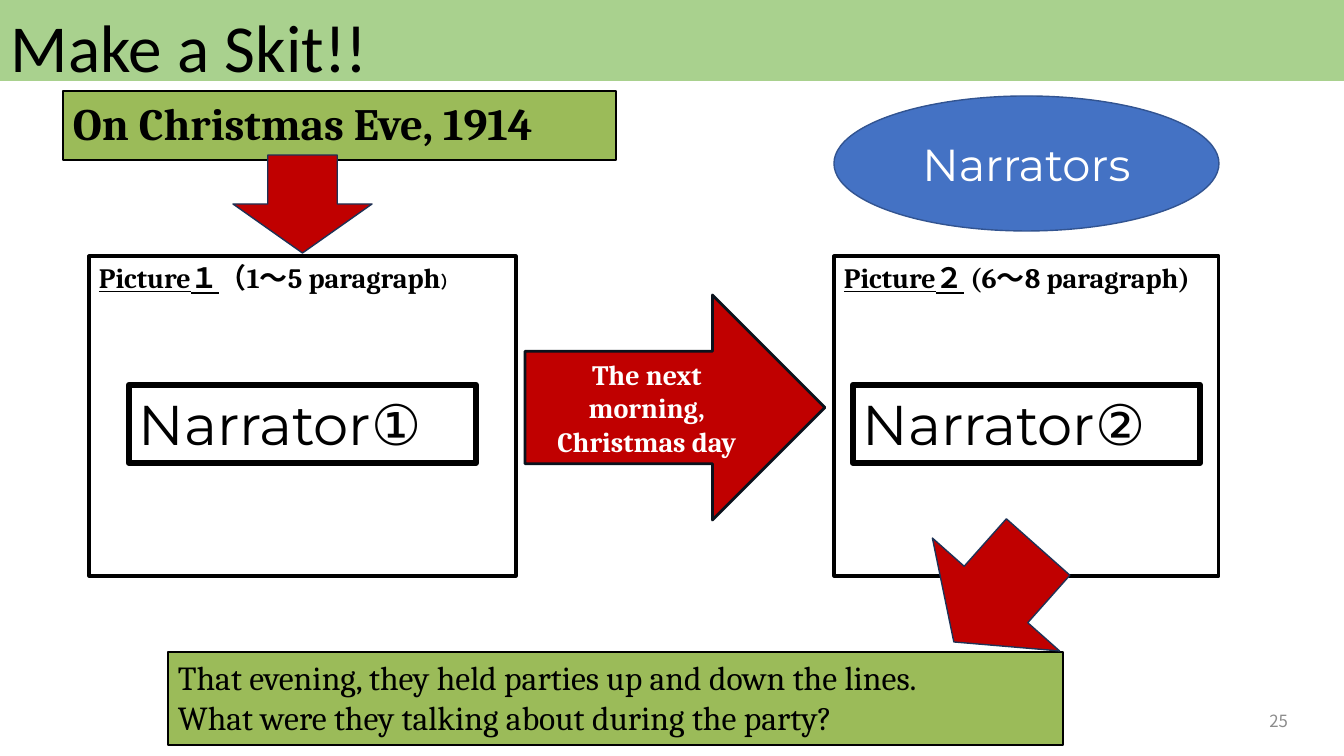
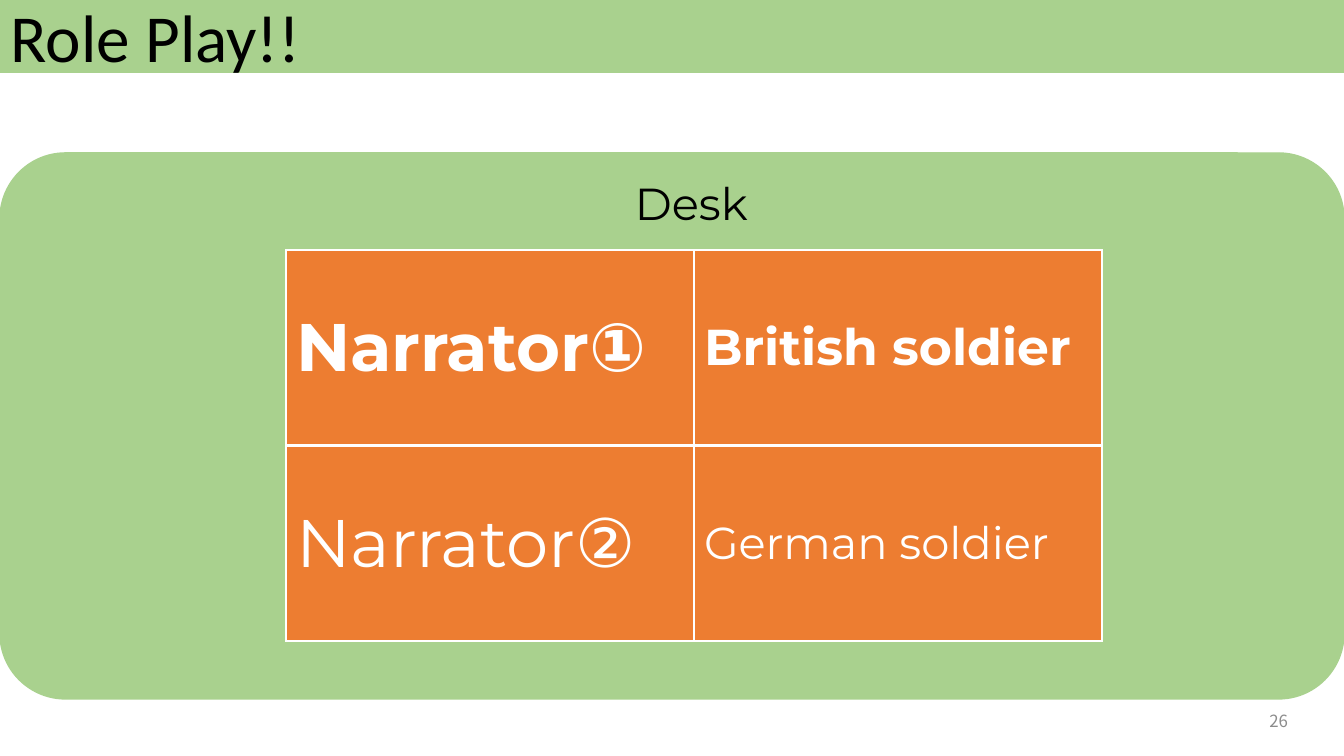
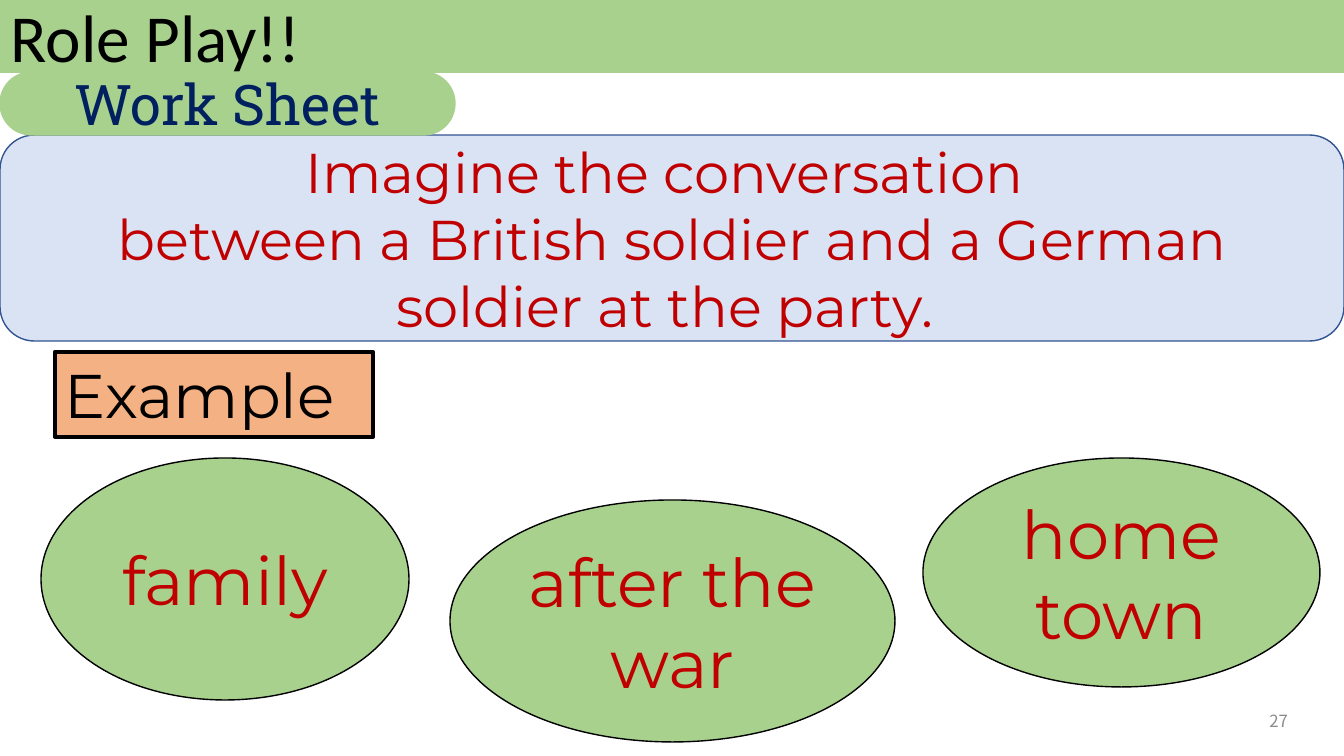
from dataclasses import dataclass
from typing import Any, NamedTuple, Optional

from lxml import etree
from pptx import Presentation
from pptx import util as u
from pptx.dml import color
from pptx.enum import shapes, text
from pptx.oxml import ns

PX = 12192000 / 1344
WIDTH, HEIGHT = 1344, 756
COLORS = {
    "black": "000000",
    "white": "FFFFFF",
    "leaf": "A9D18E",
    "olive": "9BBB59",
    "red": "C00000",
    "blue": "4472C4",
    "pale": "DAE3F3",
    "peach": "F4B183",
    "orange": "ED7D31",
    "navy": "002060",
    "edge": "325491",
    "arrow_edge": "1E3256",
    "ink": "0A121C",
    "grey": "8C8C8C",
}
SANS, SERIF, TITLE, ASIAN = "Montserrat", "Cambria", "Calibri", "Noto Sans CJK JP"
RECT = shapes.MSO_SHAPE.RECTANGLE
ROUND = shapes.MSO_SHAPE.ROUNDED_RECTANGLE
OVAL = shapes.MSO_SHAPE.OVAL
DOWN = shapes.MSO_SHAPE.DOWN_ARROW
RIGHT_ARROW = shapes.MSO_SHAPE.RIGHT_ARROW
TOP, MIDDLE = text.MSO_ANCHOR.TOP, text.MSO_ANCHOR.MIDDLE
LEFT, CENTER, RIGHT = text.PP_ALIGN.LEFT, text.PP_ALIGN.CENTER, text.PP_ALIGN.RIGHT


class Frame(NamedTuple):
    left: int
    top: int
    width: int
    height: int


class Span(NamedTuple):
    words: str
    underline: bool = False
    size: Optional[int] = None


@dataclass(frozen=True)
class Style:
    size: int
    font: str = SANS
    color: str = "black"
    bold: bool = False
    align: Any = LEFT
    anchor: Any = TOP
    spacing: float = 1.0


@dataclass(frozen=True)
class Figure:
    frame: Frame
    kind: Any = None
    fill: Optional[str] = None
    line: str = "black"
    weight: float = 1
    paras: tuple[tuple[Span, ...], ...] = ()
    style: Style = Style(18)
    turn: float = 0
    adjust: Optional[float] = None


class Cell(NamedTuple):
    words: str
    size: int
    bold: bool = False


PICTURE = Style(20, SERIF, bold=True)
NARRATOR = Style(40)
TOPIC = Style(48, color="red", align=CENTER, anchor=MIDDLE)


def px(length: float) -> u.Emu:
    return u.Emu(round(length * PX))


def rgb(name: str) -> color.RGBColor:
    return color.RGBColor.from_string(COLORS[name])


def lines(*words: str) -> tuple[tuple[Span, ...], ...]:
    return tuple((Span(line),) for line in words)


def assign(target: Any, values: dict[str, Any]) -> None:
    for name, value in values.items():
        setattr(target, name, value)


def write(frame: Any, paras: tuple[tuple[Span, ...], ...], style: Style) -> None:
    assign(frame, {"word_wrap": True, "vertical_anchor": style.anchor})
    for index, spans in enumerate(paras):
        para = frame.add_paragraph() if index else frame.paragraphs[0]
        assign(para, {"alignment": style.align, "line_spacing": style.spacing})
        for part in spans:
            span = para.add_run()
            span.text = part.words
            assign(span.font, {
                "name": style.font,
                "size": u.Pt(part.size or style.size),
                "bold": style.bold,
                "underline": part.underline,
            })
            span.font.color.rgb = rgb(style.color)
            latin = span.font._element.find(ns.qn("a:latin"))
            asian = etree.Element(ns.qn("a:ea"), typeface=ASIAN)
            latin.addnext(asian)


def draw(page: Any, figure: Figure) -> None:
    place = [px(length) for length in figure.frame]
    if figure.kind is None:
        box = page.shapes.add_textbox(*place)
    else:
        box = page.shapes.add_shape(figure.kind, *place)
        box.shadow.inherit = False
        if figure.fill:
            box.fill.solid()
            box.fill.fore_color.rgb = rgb(figure.fill)
        else:
            box.fill.background()
        box.line.color.rgb = rgb(figure.line)
        box.line.width = u.Pt(figure.weight)
    box.rotation = figure.turn
    if figure.adjust is not None:
        box.adjustments[0] = figure.adjust
    write(box.text_frame, figure.paras, figure.style)


def border(cell: Any, widths: dict[str, float]) -> None:
    props = cell._tc.get_or_add_tcPr()
    for index, (side, width) in enumerate(widths.items()):
        edge = etree.Element(ns.qn(f"a:ln{side}"), w=str(u.Pt(width)))
        fill = etree.SubElement(edge, ns.qn("a:solidFill"))
        etree.SubElement(fill, ns.qn("a:srgbClr"), val=COLORS["white"])
        props.insert(index, edge)


def draw_seats(page: Any, frame: Frame, rows: list[list[Cell]]) -> None:
    place = [px(length) for length in frame]
    table = page.shapes.add_table(len(rows), len(rows[0]), *place).table
    assign(table, {"first_row": False, "horz_banding": False})
    for r, row in enumerate(rows):
        for c, seat in enumerate(row):
            cell = table.cell(r, c)
            cell.fill.solid()
            cell.fill.fore_color.rgb = rgb("orange")
            border(cell, {"L": 1, "R": 1, "T": 3 if r else 1, "B": 1 if r else 3})
            style = Style(seat.size, color="white", bold=seat.bold)
            write(cell.text_frame, lines(seat.words), style)
            cell.vertical_anchor = MIDDLE


def add_page(deck: Any, title: str, number: int, band: int = 72,
             spacing: float = 0.9) -> Any:
    page = deck.slides.add_slide(deck.slide_layouts[6])
    furniture = [
        Figure(Frame(0, 0, WIDTH, band), RECT, "leaf", "leaf"),
        Figure(Frame(1, 0, WIDTH - 1, 122), paras=lines(title),
               style=Style(48, TITLE, spacing=spacing)),
        Figure(Frame(996, 701, 302, 40), paras=lines(str(number)),
               style=Style(12, ASIAN, "grey", align=RIGHT, anchor=MIDDLE)),
    ]
    for figure in furniture:
        draw(page, figure)
    return page


def add_skit(deck: Any) -> None:
    page = add_page(deck, "Make a Skit!!", 25, band=80, spacing=1.0)
    first = (Span("Picture１", True), Span("（1～5 paragraph"), Span("）", size=12))
    second = (Span("Picture２", True), Span(" (6～8 paragraph)"))
    figures = [
        Figure(Frame(63, 91, 553, 69), RECT, "olive", weight=2,
               paras=lines("On Christmas Eve, 1914"),
               style=Style(32, SERIF, bold=True)),
        Figure(Frame(233, 155, 139, 98), DOWN, "red", "arrow_edge"),
        Figure(Frame(89, 256, 427, 320), RECT, "white", weight=2.25,
               paras=(first,), style=PICTURE),
        Figure(Frame(525, 295, 300, 225), RIGHT_ARROW, "red", "ink", 2,
               lines("The next morning, Christmas day"),
               Style(20, SERIF, "white", True, CENTER, MIDDLE)),
        Figure(Frame(834, 256, 385, 320), RECT, "white", weight=2.25,
               paras=(second,), style=PICTURE),
        Figure(Frame(168, 652, 895, 93), RECT, "olive", weight=2,
               paras=lines("That evening, they held parties up and down the lines.",
                           "What were they talking about during the party?"),
               style=Style(24, SERIF)),
        Figure(Frame(911, 531, 170, 127), DOWN, "red", "arrow_edge", turn=41.6),
        Figure(Frame(834, 96, 385, 135), OVAL, "blue", "edge",
               paras=lines("Narrators"),
               style=Style(32, color="white", align=CENTER, anchor=MIDDLE)),
    ]
    for left, name in ((129, "Narrator①"), (853, "Narrator②")):
        figures.append(Figure(Frame(left, 385, 347, 78), RECT, weight=4.5,
                              paras=lines(name), style=NARRATOR))
    for figure in figures:
        draw(page, figure)


def add_seating(deck: Any) -> None:
    page = add_page(deck, "Role Play!!", 26)
    draw(page, Figure(Frame(0, 153, WIDTH, 546), ROUND, "leaf", "leaf", adjust=0.12))
    draw_seats(page, Frame(286, 250, 816, 391), [
        [Cell("Narrator①", 48, True), Cell("British soldier", 36, True)],
        [Cell("Narrator②", 48), Cell("German soldier", 32)],
    ])
    draw(page, Figure(Frame(625, 171, 395, 65), paras=lines("Desk"), style=Style(32)))


def add_work_sheet(deck: Any) -> None:
    page = add_page(deck, "Role Play!!", 27)
    figures = [
        Figure(Frame(0, 135, WIDTH, 206), ROUND, "pale", "edge",
               paras=lines("Imagine the conversation ",
                           "between a British soldier and a German soldier at the party. "),
               style=Style(40, color="red", align=CENTER, anchor=MIDDLE)),
        Figure(Frame(0, 72, 455, 63), ROUND, "leaf", "leaf",
               paras=lines("Work Sheet"),
               style=Style(40, "Roboto Slab", "navy", align=CENTER, anchor=MIDDLE),
               adjust=0.5),
        Figure(Frame(55, 352, 318, 85), RECT, "peach", weight=3,
               paras=lines("Example"), style=Style(44)),
    ]
    topics = {
        "family": Frame(41, 458, 368, 242),
        "home town": Frame(923, 458, 397, 229),
        "after the war": Frame(450, 500, 445, 242),
    }
    for topic, frame in topics.items():
        figures.append(Figure(frame, OVAL, "leaf", paras=lines(topic), style=TOPIC))
    for figure in figures:
        draw(page, figure)


def main() -> None:
    deck = Presentation()
    assign(deck, {"slide_width": px(WIDTH), "slide_height": px(HEIGHT)})
    for build in (add_skit, add_seating, add_work_sheet):
        build(deck)
    deck.save("out.pptx")


if __name__ == "__main__":
    main()
